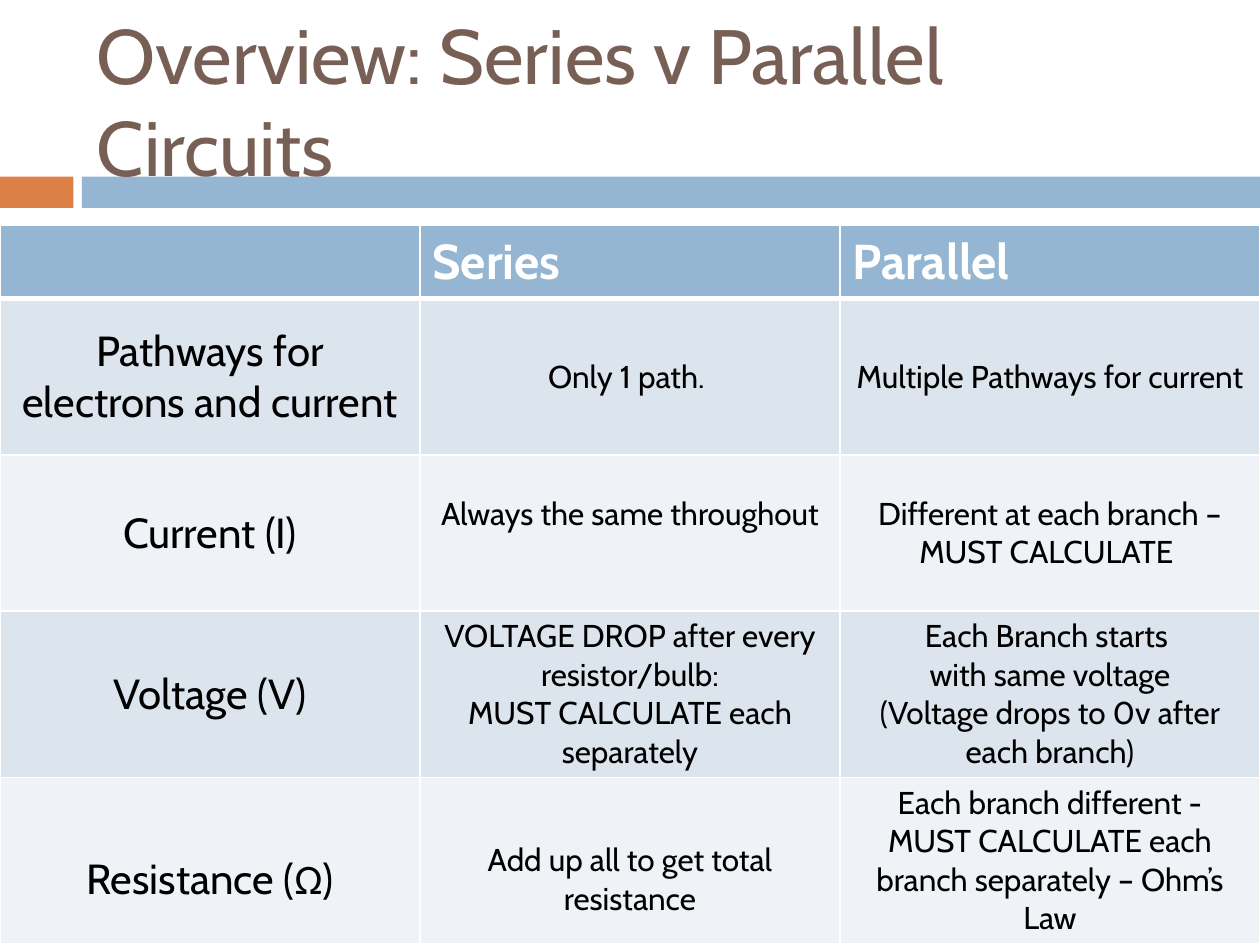
from dataclasses import dataclass

from lxml import etree
from pptx import Presentation
from pptx.dml.color import RGBColor
from pptx.enum import shapes, text
from pptx.oxml import ns
from pptx.util import Cm, Pt


@dataclass(frozen=True)
class Theme:
    font: str = "Cabin"
    greek: str = "Calibri"
    brown: str = "775F55"
    orange: str = "DD8047"
    blue: str = "94B6D2"
    white: str = "FFFFFF"
    black: str = "000000"
    bands: tuple = ("DCE5EE", "EFF3F7")
    title: int = 44
    head: int = 28
    label: int = 24
    body: int = 18
    thin: int = 1
    thick: int = 3


THEME = Theme()
WIDTH = 25.4
TOP = 4.55
HEIGHTS = (1.47, 3.15, 3.15, 3.35, 3.35)
SHIFT = 0.89
ROWS = (
    ("", "Series", "Parallel"),
    ("Pathways for electrons and current", "Only 1 path. ",
     "Multiple Pathways for current"),
    ("Current (I)", "Always the same throughout",
     "Different at each branch – MUST CALCULATE "),
    ("Voltage (V)",
     "VOLTAGE DROP after every resistor/bulb:\nMUST CALCULATE each separately",
     "Each Branch starts \nwith same voltage\n"
     "(Voltage drops to 0v after each branch)"),
    ("Resistance (Ω)", "Add up all to get total resistance",
     "Each branch different - MUST CALCULATE each branch separately – Ohm’s Law"),
)


def write(frame, words, size, color, bold=False, align=text.PP_ALIGN.LEFT):
    frame.word_wrap = True
    for num, line in enumerate(words.split("\n")):
        para = frame.paragraphs[0] if num == 0 else frame.add_paragraph()
        para.alignment = align
        for part in line.partition("Ω"):
            if part:
                run = para.add_run()
                run.text = part
                font = run.font
                font.name = THEME.greek if part == "Ω" else THEME.font
                font.size = Pt(size)
                font.bold = bold
                font.color.rgb = RGBColor.from_string(color)


def add_bar(slide, left, width, color):
    bar = slide.shapes.add_shape(shapes.MSO_SHAPE.RECTANGLE, Cm(left), Cm(3.56),
                                 Cm(width), Cm(0.63))
    bar.shadow.inherit = False
    bar.fill.solid()
    bar.fill.fore_color.rgb = RGBColor.from_string(color)
    bar.line.fill.background()


def add_title(slide, words):
    box = slide.shapes.add_textbox(Cm(1.7), Cm(0.64), Cm(22.66), Cm(2.74))
    frame = box.text_frame
    frame.auto_size = text.MSO_AUTO_SIZE.NONE
    frame.vertical_anchor = text.MSO_ANCHOR.MIDDLE
    write(frame, words, THEME.title, THEME.brown)


def set_edges(cell, row):
    props = cell._tc.get_or_add_tcPr()
    heavy = {0: "lnB", 1: "lnT"}.get(row)
    for side in ("lnL", "lnR", "lnT", "lnB"):
        width = THEME.thick if side == heavy else THEME.thin
        line = etree.SubElement(props, ns.qn(f"a:{side}"), w=str(Pt(width)))
        fill = etree.SubElement(line, ns.qn("a:solidFill"))
        etree.SubElement(fill, ns.qn("a:srgbClr"), val=THEME.white)


def fill_cell(cell, row, col, words):
    set_edges(cell, row)
    cell.vertical_anchor = text.MSO_ANCHOR.MIDDLE
    cell.fill.solid()
    shade = THEME.bands[(row - 1) % 2] if row else THEME.blue
    cell.fill.fore_color.rgb = RGBColor.from_string(shade)
    if row == 0:
        write(cell.text_frame, words, THEME.head, THEME.white, bold=True)
    else:
        size = THEME.body if col else THEME.label
        write(cell.text_frame, words, size, THEME.black,
              align=text.PP_ALIGN.CENTER)


def add_grid(slide):
    count = len(ROWS[0])
    grid = slide.shapes.add_table(len(ROWS), count, Cm(0), Cm(TOP), Cm(WIDTH),
                                  Cm(sum(HEIGHTS))).table
    for col in grid.columns:
        col.width = Cm(WIDTH / count)
    for row, words in enumerate(ROWS):
        grid.rows[row].height = Cm(HEIGHTS[row])
        for col, item in enumerate(words):
            fill_cell(grid.cell(row, col), row, col, item)
    grid.cell(2, 1).margin_bottom = Cm(SHIFT)
    for col in (0, 1):
        grid.cell(4, col).margin_top = Cm(SHIFT)


def main():
    deck = Presentation()
    deck.slide_width, deck.slide_height = Cm(WIDTH), Cm(19.05)
    slide = deck.slides.add_slide(deck.slide_layouts[6])
    add_bar(slide, 0, 1.48, THEME.orange)
    add_bar(slide, 1.65, WIDTH - 1.65, THEME.blue)
    add_title(slide, "Overview: Series v Parallel Circuits")
    add_grid(slide)
    deck.save("out.pptx")


if __name__ == "__main__":
    main()
